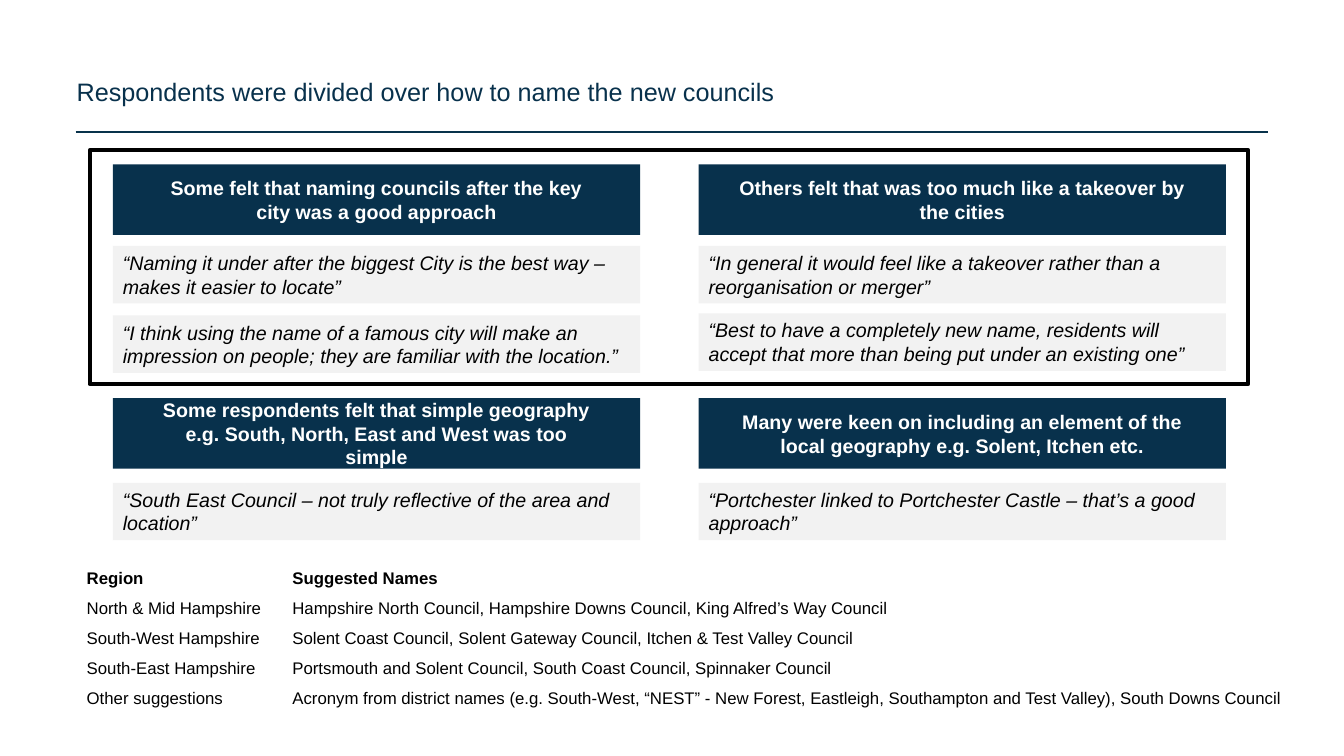
from lxml import etree
from pptx import Presentation
from pptx.dml.color import RGBColor
from pptx.enum.shapes import MSO_CONNECTOR, MSO_SHAPE
from pptx.enum.text import MSO_ANCHOR, MSO_AUTO_SIZE, PP_ALIGN
from pptx.oxml.ns import qn
from pptx.util import Inches, Pt

RECTANGLE = MSO_SHAPE.RECTANGLE
STRAIGHT = MSO_CONNECTOR.STRAIGHT
TOP, MIDDLE = MSO_ANCHOR.TOP, MSO_ANCHOR.MIDDLE
LEFT, CENTER = PP_ALIGN.LEFT, PP_ALIGN.CENTER
FIT_SHAPE = MSO_AUTO_SIZE.SHAPE_TO_FIT_TEXT

NAVY = RGBColor(0x08, 0x31, 0x4C)
RULE_NAVY = RGBColor(0x08, 0x32, 0x4B)
PALE_GREY = RGBColor(0xF2, 0xF2, 0xF2)
WHITE = RGBColor(0xFF, 0xFF, 0xFF)
BLACK = RGBColor(0x00, 0x00, 0x00)

COLUMN_LEFTS = (1.12, 6.93)
CARD_WIDTH = 5.23
HEADING_HEIGHT = 0.7
QUOTE_HEIGHT = 0.57

THEMES = [
    (0, 1.63, "Some felt that naming councils after the key city was a good approach", [
        (2.44, "“Naming it under after the biggest City is the best way – makes it easier to locate”"),
        (3.13, "“I think using the name of a famous city will make an impression on people; "
               "they are familiar with the location.”"),
    ]),
    (1, 1.63, "Others felt that was too much like a takeover by the cities", [
        (2.44, "“In general it would feel like a takeover rather than a reorganisation or merger”"),
        (3.11, "“Best to have a completely new name, residents will accept that more than "
               "being put under an existing one”"),
    ]),
    (0, 3.95, "Some respondents felt that simple geography e.g. South, North, East and West was too simple", [
        (4.79, "“South East Council – not truly reflective of the area and location”"),
    ]),
    (1, 3.95, "Many were keen on including an element of the local geography e.g. Solent, Itchen etc.", [
        (4.79, "“Portchester linked to Portchester Castle – that’s a good approach”"),
    ]),
]

SUGGESTIONS = [
    ("Region", "Suggested Names"),
    ("North & Mid Hampshire", "Hampshire North Council, Hampshire Downs Council, King Alfred’s Way Council"),
    ("South-West Hampshire", "Solent Coast Council, Solent Gateway Council, Itchen & Test Valley Council"),
    ("South-East Hampshire", "Portsmouth and Solent Council, South Coast Council, Spinnaker Council"),
    ("Other suggestions", "Acronym from district names (e.g. South-West, “NEST” - New Forest, Eastleigh, "
                          "Southampton and Test Valley), South Downs Council"),
]


def write_text(frame, text, size, color, alignment=LEFT, **styles):
    paragraph = frame.paragraphs[0]
    paragraph.text = text
    paragraph.alignment = alignment
    font = paragraph.runs[0].font
    font.color.rgb = color
    for name, value in {"name": "Arial", "size": Pt(size), **styles}.items():
        setattr(font, name, value)
    return paragraph


def add_box(left, top, width, height, fill):
    shape = slide.shapes.add_shape(
        RECTANGLE, Inches(left), Inches(top), Inches(width), Inches(height))
    shape.shadow.inherit = False
    shape.fill.solid()
    shape.fill.fore_color.rgb = fill
    shape.line.fill.background()
    shape.text_frame.word_wrap = True
    return shape


presentation = Presentation()
presentation.slide_width = Inches(13.33)
presentation.slide_height = Inches(7.5)
slide = presentation.slides.add_slide(presentation.slide_layouts[5])

rule = slide.shapes.add_connector(
    STRAIGHT, Inches(0.75), Inches(1.31), Inches(12.58), Inches(1.31))
rule.line.color.rgb = RULE_NAVY
rule.line.width = Pt(1.25)
etree.SubElement(rule._element.spPr, qn("a:effectLst"))

title = slide.shapes.title
title.left, title.top = Inches(0.76), Inches(0.76)
title.width, title.height = Inches(11.89), Inches(0.3)
title_format = {"margin_left": 0, "margin_top": 0, "margin_right": 0, "margin_bottom": 0,
                "vertical_anchor": TOP, "word_wrap": True, "auto_size": FIT_SHAPE}
for name, value in title_format.items():
    setattr(title.text_frame, name, value)
write_text(title.text_frame, "Respondents were divided over how to name the new councils", 18, NAVY)

frame_box = add_box(0.89, 1.49, 11.49, 2.32, WHITE)
frame_box.line.color.rgb = BLACK
frame_box.line.width = Pt(3)

for column, heading_top, heading_text, quotes in THEMES:
    left = COLUMN_LEFTS[column]
    heading = add_box(left, heading_top, CARD_WIDTH, HEADING_HEIGHT, NAVY)
    heading.text_frame.margin_left = heading.text_frame.margin_right = Inches(0.39)
    heading.text_frame.vertical_anchor = MIDDLE
    write_text(heading.text_frame, heading_text, 14, WHITE, CENTER, bold=True)
    for quote_top, quote_text in quotes:
        quote = add_box(left, quote_top, CARD_WIDTH, QUOTE_HEIGHT, PALE_GREY)
        quote.text_frame.vertical_anchor = TOP
        quote.text_frame.auto_size = FIT_SHAPE
        write_text(quote.text_frame, quote_text, 14, BLACK, italic=True)

table = slide.shapes.add_table(
    len(SUGGESTIONS), 2, Inches(0.76), Inches(5.59), Inches(12.1), Inches(1.47)).table
table.first_row = False
table.horz_banding = False
table.columns[0].width = Inches(2.04)
table.columns[1].width = Inches(10.06)
for row, values in enumerate(SUGGESTIONS):
    for column, text in enumerate(values):
        cell = table.cell(row, column)
        cell.fill.background()
        cell.vertical_anchor = MIDDLE
        paragraph = write_text(cell.text_frame, text, 12, BLACK, bold=row == 0)
        paragraph.line_spacing = Pt(14.2)

presentation.save("out.pptx")
